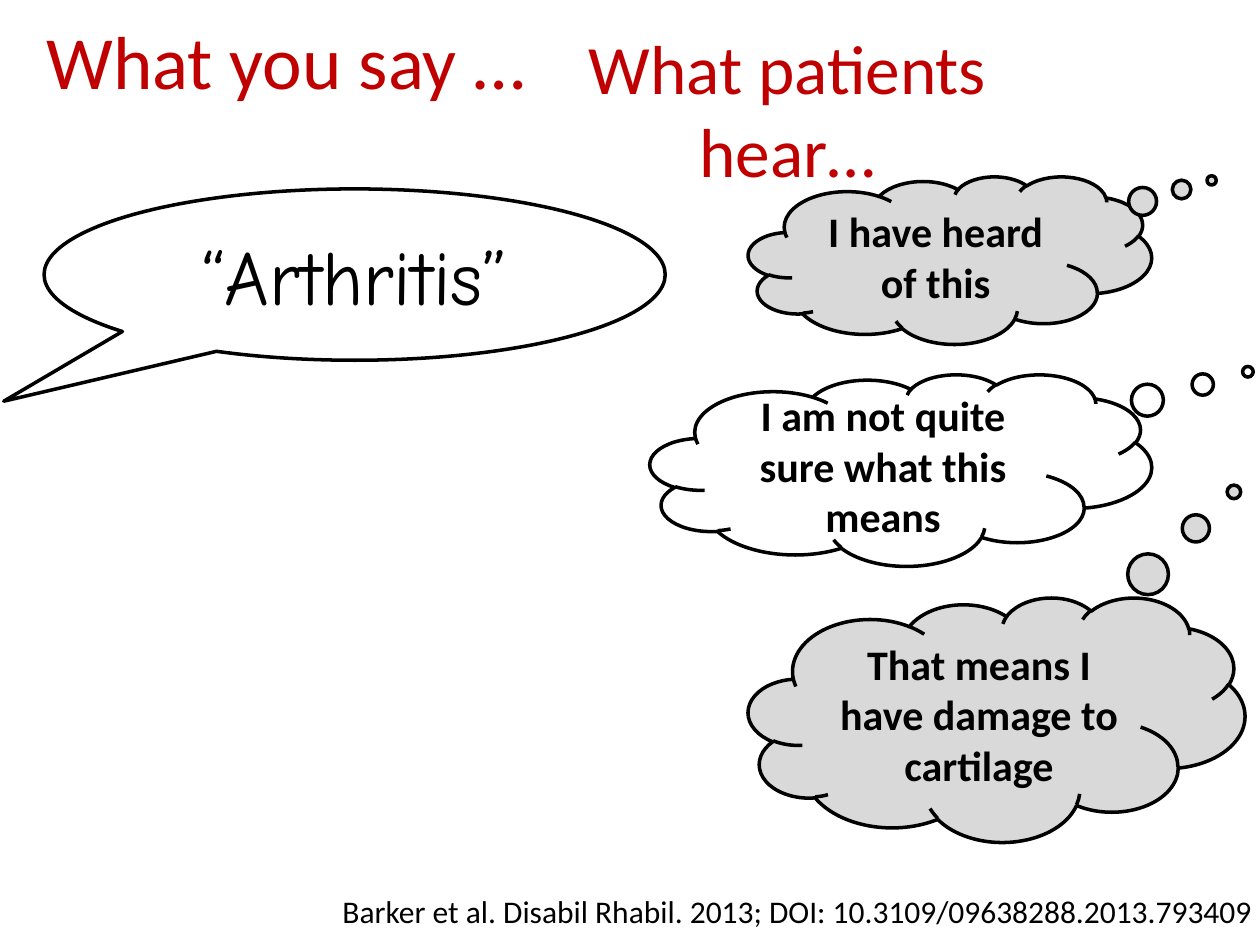
from dataclasses import dataclass
from typing import Any

from pptx import Presentation
from pptx.dml.color import RGBColor
from pptx.enum import shapes, text
from pptx.util import Inches, Pt


@dataclass(frozen=True)
class Theme:
    black: str = "000000"
    white: str = "FFFFFF"
    grey: str = "D9D9D9"
    red: str = "C00000"
    body_font: str = "Calibri"
    speech_font: str = "Comic Neue"
    outline: float = 2
    say_size: float = 42.9
    hear_size: float = 39.6
    speech_size: float = 44
    thought_size: float = 24
    citation_size: float = 18


@dataclass(frozen=True)
class Frame:
    left: float
    top: float
    width: float
    height: float

    def lengths(self) -> tuple[int, ...]:
        return tuple(Inches(n) for n in (self.left, self.top, self.width, self.height))


@dataclass(frozen=True)
class Lettering:
    size: float
    color: str = Theme.black
    font: str = Theme.body_font
    bold: bool = False
    align: Any = text.PP_ALIGN.CENTER
    anchor: Any = text.MSO_ANCHOR.MIDDLE


@dataclass(frozen=True)
class Callout:
    kind: Any
    frame: Frame
    pointer: tuple[float, float]
    fill: str
    words: str
    lettering: Lettering


THEME = Theme()
CLOUD = shapes.MSO_SHAPE.CLOUD_CALLOUT
THOUGHT = Lettering(THEME.thought_size, bold=True)
CALLOUTS = [
    Callout(shapes.MSO_SHAPE.OVAL_CALLOUT, Frame(0.35, 1.5, 4.93, 1.36), (-0.565, 0.739),
            THEME.white, "“Arthritis”", Lettering(THEME.speech_size, font=THEME.speech_font)),
    Callout(CLOUD, Frame(5.94, 1.4, 3.2, 1.33), (0.649, -0.476),
            THEME.grey, "I have heard of this", THOUGHT),
    Callout(CLOUD, Frame(5.16, 2.97, 3.98, 1.52), (0.692, -0.513),
            THEME.white, "I am not quite sure what this means", THOUGHT),
    Callout(CLOUD, Frame(5.94, 4.74, 3.94, 1.94), (0.478, -0.931),
            THEME.grey, "That means I have damage to cartilage", THOUGHT),
]


def apply(target: Any, values: dict[str, Any]) -> None:
    for name, value in values.items():
        setattr(target, name, value)


def write(box: Any, words: str, lettering: Lettering) -> None:
    frame = box.text_frame
    apply(frame, {"word_wrap": True, "auto_size": text.MSO_AUTO_SIZE.NONE,
                  "vertical_anchor": lettering.anchor})
    para = frame.paragraphs[0]
    apply(para, {"alignment": lettering.align, "line_spacing": 1.0})
    span = para.add_run()
    span.text = words
    apply(span.font, {"name": lettering.font, "size": Pt(lettering.size),
                      "bold": lettering.bold})
    span.font.color.rgb = RGBColor.from_string(lettering.color)


def add_title(page: Any, frame: Frame, words: str, lettering: Lettering) -> None:
    title = page.shapes.title
    apply(title, dict(zip(("left", "top", "width", "height"), frame.lengths())))
    write(title, words, lettering)


def add_label(page: Any, frame: Frame, words: str, lettering: Lettering) -> None:
    write(page.shapes.add_textbox(*frame.lengths()), words, lettering)


def add_callout(page: Any, callout: Callout) -> None:
    bubble = page.shapes.add_shape(callout.kind, *callout.frame.lengths())
    bubble.shadow.inherit = False
    for index, offset in enumerate(callout.pointer):
        bubble.adjustments[index] = offset
    bubble.fill.solid()
    bubble.fill.fore_color.rgb = RGBColor.from_string(callout.fill)
    bubble.line.color.rgb = RGBColor.from_string(THEME.black)
    bubble.line.width = Pt(THEME.outline)
    write(bubble, callout.words, callout.lettering)


def main() -> None:
    deck = Presentation()
    apply(deck, {"slide_width": Inches(10), "slide_height": Inches(7.5)})
    page = deck.slides.add_slide(deck.slide_layouts.get_by_name("Title Only"))
    add_title(page, Frame(4.54, 0.47, 3.42, 0.78), "What patients hear…",
              Lettering(THEME.hear_size, THEME.red))
    add_label(page, Frame(0, -0.08, 4.54, 1.1), "What you say …",
              Lettering(THEME.say_size, THEME.red))
    for callout in CALLOUTS:
        add_callout(page, callout)
    add_label(page, Frame(2.4, 7.03, 7.64, 0.4),
              "Barker et al. Disabil Rhabil. 2013; DOI: 10.3109/09638288.2013.793409",
              Lettering(THEME.citation_size, align=text.PP_ALIGN.RIGHT,
                        anchor=text.MSO_ANCHOR.TOP))
    deck.save("out.pptx")


if __name__ == "__main__":
    main()
